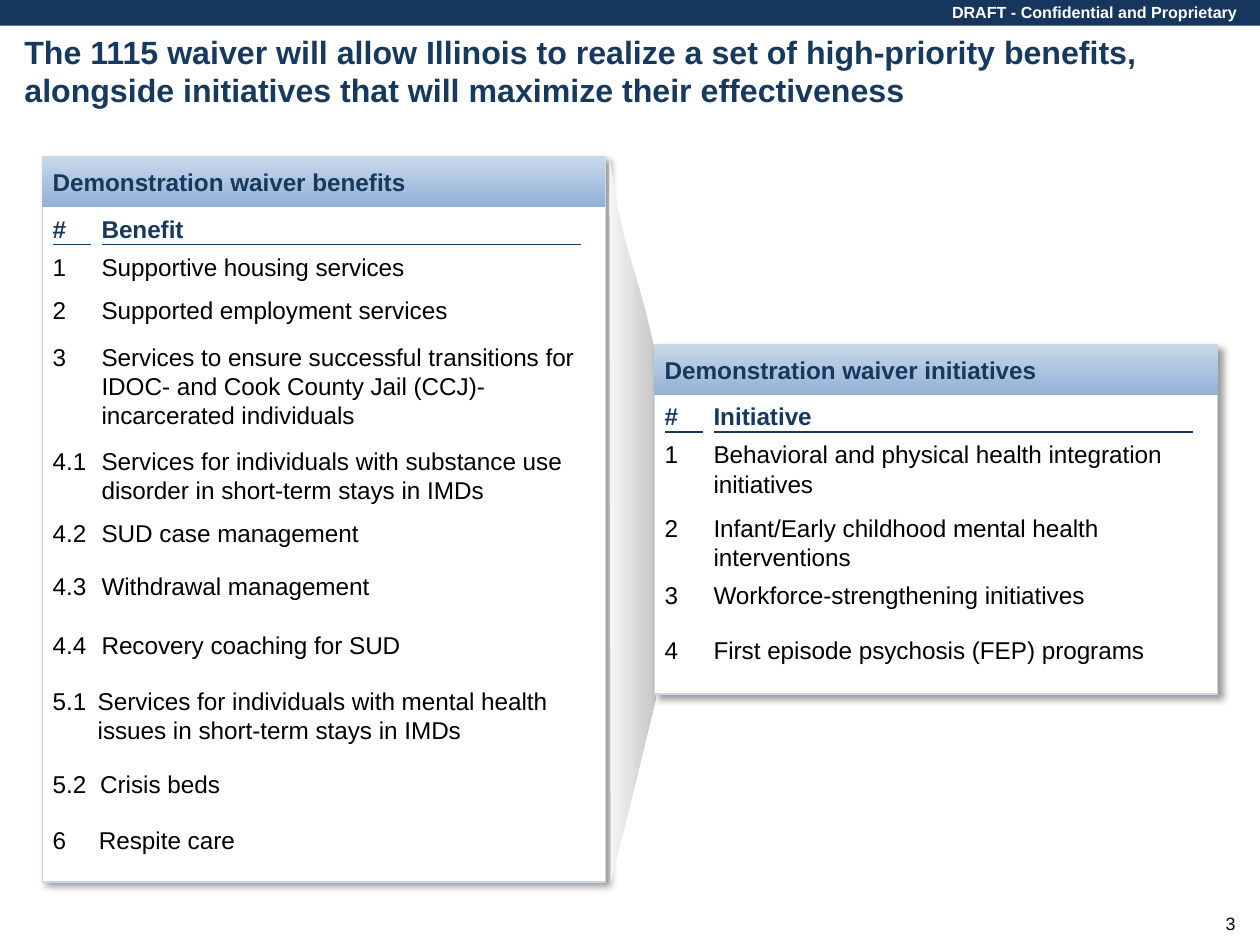
"""Builds the slide on the benefits and initiatives of the 1115 waiver."""
from dataclasses import dataclass

from lxml import etree
from pptx import Presentation
from pptx.dml.color import RGBColor
from pptx.enum.shapes import MSO_CONNECTOR, MSO_SHAPE
from pptx.enum.text import MSO_ANCHOR, PP_ALIGN
from pptx.oxml.ns import qn
from pptx.util import Inches, Pt

RECTANGLE = MSO_SHAPE.RECTANGLE
STRAIGHT = MSO_CONNECTOR.STRAIGHT
TOP, MIDDLE, BOTTOM = MSO_ANCHOR.TOP, MSO_ANCHOR.MIDDLE, MSO_ANCHOR.BOTTOM
LEFT, RIGHT = PP_ALIGN.LEFT, PP_ALIGN.RIGHT


@dataclass(frozen=True)
class Theme:
    font: str = "Arial"
    banner: str = "17365D"
    heading: str = "17395D"
    body: str = "000000"
    white: str = "FFFFFF"
    border: str = "C8D8EA"
    header_end: str = "92B1D6"
    funnel_start: str = "F6F6F6"
    funnel_end: str = "C7C7C7"
    title_size: float = 18
    text_size: float = 13.6
    page_size: float = 10
    notice_size: float = 9


THEME = Theme()
PANEL_WIDTH = 4.38
HEADER_HEIGHT = 0.39
LINE_HEIGHT = 0.24
NUMBER_OFFSET, NUMBER_WIDTH = 0.08, 0.3
LABEL_OFFSET, LABEL_WIDTH = 0.46, 3.74
RULE_WIDTH = 3.73

BENEFITS = [
    (1.96, "1", "Supportive housing services", 0),
    (2.3, "2", "Supported employment services", 0),
    (2.66, "3", "Services to ensure successful transitions for IDOC- and "
                "Cook County Jail (CCJ)-incarcerated individuals", 0),
    (3.47, "4.1", "Services for individuals with substance use disorder in "
                  "short-term stays in IMDs", 0),
    (4.03, "4.2", "SUD case management", 0),
    (4.44, "4.3", "Withdrawal management", 0),
    (4.9, "4.4", "Recovery coaching for SUD", 0),
    (5.34, "5.1", "Services for individuals with mental health issues in "
                  "short-term stays in IMDs", -0.03),
    (5.98, "5.2", "Crisis beds", -0.01),
    (6.42, "6", "Respite care", -0.02),
]
INITIATIVES = [
    (3.42, "1", "Behavioral and physical health integration initiatives", 0),
    (3.99, "2", "Infant/Early childhood mental health interventions", 0),
    (4.51, "3", "Workforce-strengthening initiatives", 0),
    (4.94, "4", "First episode psychosis (FEP) programs", 0),
]


def rgb(code):
    """Return the colour for a hex code."""
    return RGBColor.from_string(code)


def write(frame, text, *, size=THEME.text_size, color=THEME.body, bold=False,
          align=LEFT, anchor=TOP, inset=0, wrap=True):
    """Put formatted text into a text frame."""
    frame.word_wrap = wrap
    frame.vertical_anchor = anchor
    frame.margin_left = frame.margin_right = Inches(inset)
    frame.margin_top = frame.margin_bottom = Inches(inset)
    paragraph = frame.paragraphs[0]
    paragraph.alignment = align
    run = paragraph.add_run()
    run.text = text
    run.font.name = THEME.font
    run.font.size = Pt(size)
    run.font.bold = bold
    run.font.color.rgb = rgb(color)


def add_text(slide, text, left, top, width, height=LINE_HEIGHT, **style):
    """Add a text box."""
    box = slide.shapes.add_textbox(
        Inches(left), Inches(top), Inches(width), Inches(height))
    write(box.text_frame, text, **style)


def fill_gradient(shape, start, end, angle):
    """Fill a shape with a two-colour linear gradient."""
    shape.fill.gradient()
    shape.fill.gradient_angle = angle
    for stop, color in zip(shape.fill.gradient_stops, (start, end)):
        stop.color.rgb = rgb(color)


def add_rectangle(slide, left, top, width, height, fill=None, border=None):
    """Add a flat rectangle and return it."""
    rectangle = slide.shapes.add_shape(
        RECTANGLE, Inches(left), Inches(top), Inches(width), Inches(height))
    rectangle.shadow.inherit = False
    if fill:
        rectangle.fill.solid()
        rectangle.fill.fore_color.rgb = rgb(fill)
    if border:
        rectangle.line.color.rgb = rgb(border)
        rectangle.line.width = Pt(1)
    else:
        rectangle.line.fill.background()
    return rectangle


def cast_shadow(shape):
    """Give a shape a soft shadow to the lower right."""
    effects = shape._element.spPr.find(qn("a:effectLst"))
    shadow = etree.SubElement(
        effects, qn("a:outerShdw"), blurRad=str(Pt(4)), dist=str(Pt(3)),
        dir="2700000", algn="tl", rotWithShape="0")
    color = etree.SubElement(shadow, qn("a:srgbClr"), val=THEME.body)
    etree.SubElement(color, qn("a:alpha"), val="40000")


def add_rule(slide, left, top, width):
    """Add a thin horizontal rule."""
    rule = slide.shapes.add_connector(
        STRAIGHT, Inches(left), Inches(top), Inches(left + width), Inches(top))
    rule.line.color.rgb = rgb(THEME.heading)
    rule.line.width = Pt(0.75)
    etree.SubElement(rule._element.spPr, qn("a:effectLst"))


def add_panel(slide, left, top, height, heading, column, rows):
    """Add a shadowed panel with a header and a numbered list."""
    cast_shadow(add_rectangle(slide, left, top, PANEL_WIDTH, height,
                              fill=THEME.white, border=THEME.border))
    header = add_rectangle(slide, left, top, PANEL_WIDTH, HEADER_HEIGHT)
    fill_gradient(header, THEME.border, THEME.header_end, 270)
    write(header.text_frame, heading, color=THEME.heading, bold=True,
          anchor=MIDDLE, inset=0.08)

    number_left, label_left = left + NUMBER_OFFSET, left + LABEL_OFFSET
    for text, column_left, width in (("#", number_left, NUMBER_WIDTH),
                                     (column, label_left, RULE_WIDTH)):
        add_text(slide, text, column_left, top + 0.43, width,
                 color=THEME.heading, bold=True, anchor=BOTTOM)
        add_rule(slide, column_left, top + 0.68, width)
    for row_top, number, label, shift in rows:
        add_text(slide, number, number_left, row_top, NUMBER_WIDTH)
        add_text(slide, label, label_left + shift, row_top, LABEL_WIDTH)


def curve_points(start, control_1, control_2, end, steps=24):
    """Return points along a cubic curve, without its start."""
    points = []
    for step in range(1, steps + 1):
        t = step / steps
        weights = ((1 - t) ** 3, 3 * t * (1 - t) ** 2, 3 * t * t * (1 - t), t ** 3)
        points.append(tuple(
            Inches(sum(weight * value for weight, value in zip(weights, axis)))
            for axis in zip(start, control_1, control_2, end)))
    return points


def add_funnel(slide):
    """Add the shaded funnel that joins the two panels."""
    start, shoulder, corner, tip = (4.74, 1.22), (5.09, 2.72), (5.1, 5.44), (4.75, 6.87)
    builder = slide.shapes.build_freeform(Inches(start[0]), Inches(start[1]))
    builder.add_line_segments(
        curve_points(start, (4.86, 2.05), (4.91, 1.92), shoulder)
        + curve_points(shoulder, (5.09, 3.07), (5.1, 5.08), corner)
        + [(Inches(tip[0]), Inches(tip[1]))], close=True)
    funnel = builder.convert_to_shape()
    funnel.shadow.inherit = False
    funnel.line.fill.background()
    fill_gradient(funnel, THEME.funnel_start, THEME.funnel_end, 0)


def main():
    """Build and save the slide."""
    deck = Presentation()
    deck.slide_width, deck.slide_height = Inches(9.8), Inches(7.35)
    slide = deck.slides.add_slide(deck.slide_layouts[6])
    add_rectangle(slide, 0, 0, 9.8, 0.2, fill=THEME.banner)
    add_text(slide, "3", 9.44, 7.1, 0.17, 0.17, size=THEME.page_size,
             align=RIGHT, anchor=MIDDLE, wrap=False)
    add_text(slide, "DRAFT - Confidential and Proprietary", 7.32, 0.02, 2.3, 0.15,
             size=THEME.notice_size, color=THEME.white, bold=True,
             align=RIGHT, anchor=MIDDLE)
    add_text(slide, "The 1115 waiver will allow Illinois to realize a set of "
             "high-priority benefits, alongside initiatives that will maximize "
             "their effectiveness", 0.19, 0.25, 9.43, 0.61,
             size=THEME.title_size, color=THEME.heading, bold=True)
    add_panel(slide, 0.33, 1.22, 5.64, "Demonstration waiver benefits",
              "Benefit", BENEFITS)
    add_funnel(slide)
    add_panel(slide, 5.09, 2.68, 2.72, "Demonstration waiver initiatives",
              "Initiative", INITIATIVES)
    deck.save("out.pptx")


if __name__ == "__main__":
    main()
